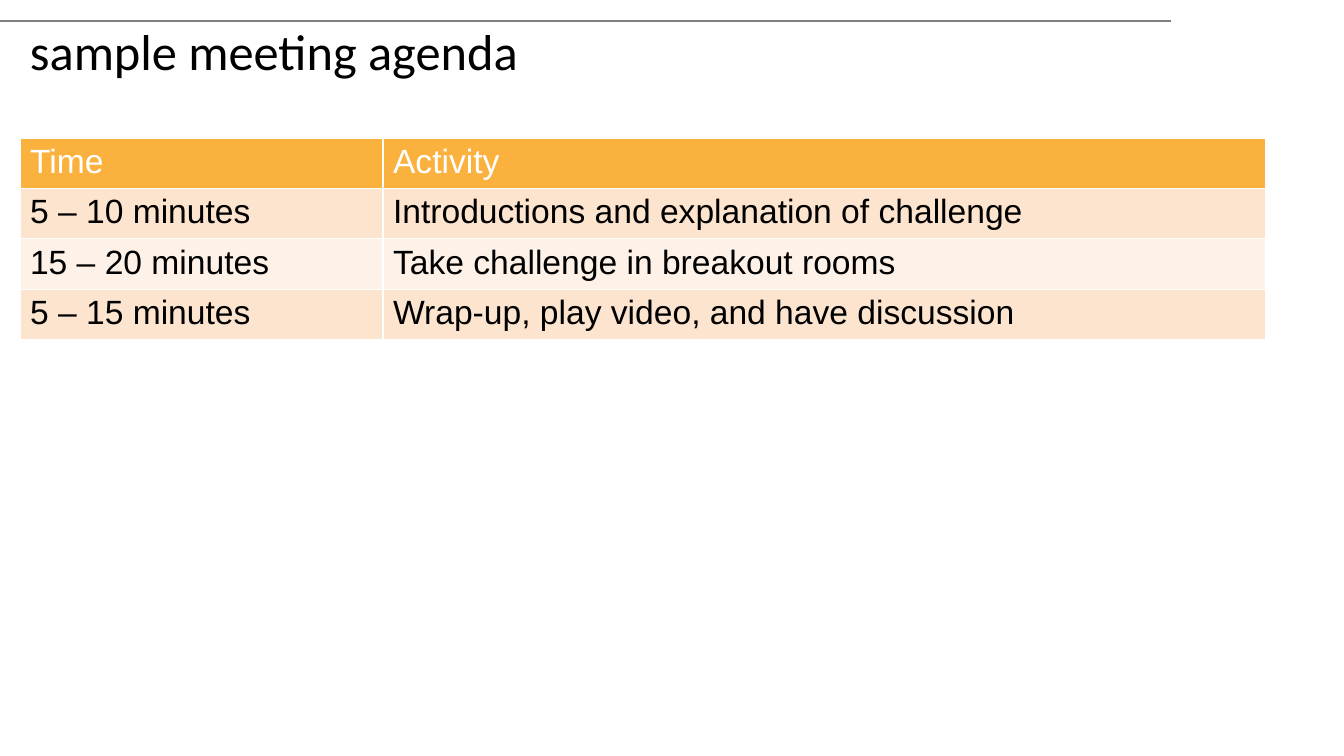
from dataclasses import dataclass

from lxml.etree import SubElement
from pptx import Presentation
from pptx.dml.color import RGBColor
from pptx.enum.shapes import MSO_CONNECTOR
from pptx.oxml.ns import qn
from pptx.slide import Slide
from pptx.util import Emu, Pt

SCALE = 914400 / 100.8
BLACK, WHITE = "000000", "FFFFFF"


@dataclass
class Row:
    time: str
    task: str
    fill: str
    ink: str = BLACK


ROWS = [
    Row("Time", "Activity", "FBB13D", WHITE),
    Row("5 – 10 minutes", "Introductions and explanation of challenge", "FDE4CE"),
    Row("15 – 20 minutes", "Take challenge in breakout rooms", "FEF2E8"),
    Row("5 – 15 minutes", "Wrap-up, play video, and have discussion", "FDE4CE"),
]
WIDTHS = [363, 883]
HEIGHT = 41


def px(size: int) -> Emu:
    return Emu(round(size * SCALE))


def color(code: str) -> RGBColor:
    return RGBColor.from_string(code)


def style(font, name: str, size: int, ink: str) -> None:
    font.name = name
    font.size = Pt(size)
    font.bold = False
    font.color.rgb = color(ink)


def draw_rule(slide: Slide) -> None:
    rule = slide.shapes.add_connector(
        MSO_CONNECTOR.STRAIGHT, px(1171), px(21), px(0), px(21))
    rule.line.color.rgb = color("808080")
    rule.line.width = Pt(0.75)
    SubElement(rule.element.spPr, qn("a:effectLst"))


def draw_title(slide: Slide) -> None:
    box = slide.shapes.add_textbox(px(20), px(22), px(1152), px(108))
    frame = box.text_frame
    frame.word_wrap = True
    frame.text = "sample meeting agenda"
    title = frame.paragraphs[0]
    title.line_spacing = 0.9
    style(title.font, "Calibri", 36, BLACK)


def draw_table(slide: Slide) -> None:
    table = slide.shapes.add_table(
        len(ROWS), len(WIDTHS), px(20), px(138),
        px(sum(WIDTHS)), px(HEIGHT * len(ROWS))).table
    for column, width in zip(table.columns, WIDTHS):
        column.width = px(width)
    for line, row in zip(table.rows, ROWS):
        line.height = px(HEIGHT)
        for cell, text in zip(line.cells, (row.time, row.task)):
            cell.text = text
            cell.fill.solid()
            cell.fill.fore_color.rgb = color(row.fill)
            style(cell.text_frame.paragraphs[0].font, "Arial", 24, row.ink)


def main() -> None:
    deck = Presentation()
    deck.slide_width, deck.slide_height = px(1344), px(756)
    slide = deck.slides.add_slide(deck.slide_layouts[6])
    draw_rule(slide)
    draw_title(slide)
    draw_table(slide)
    deck.save("out.pptx")


if __name__ == "__main__":
    main()
